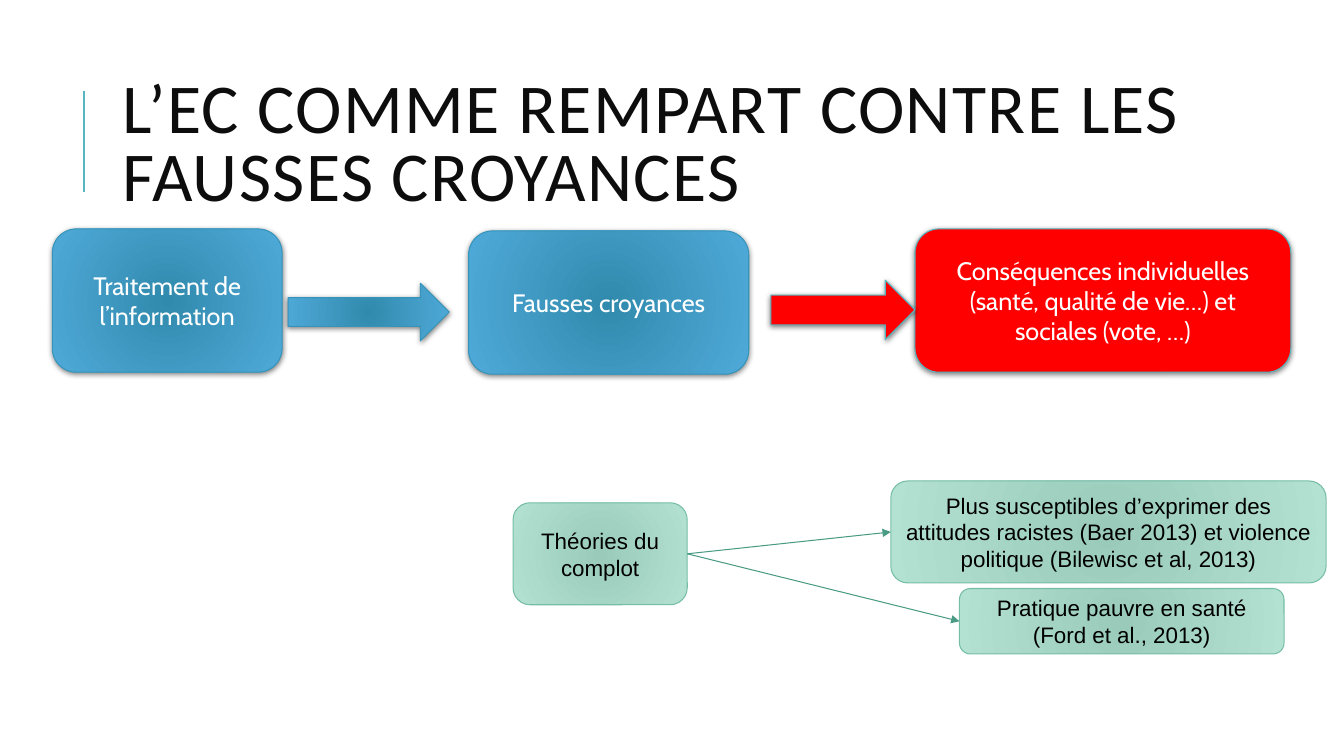
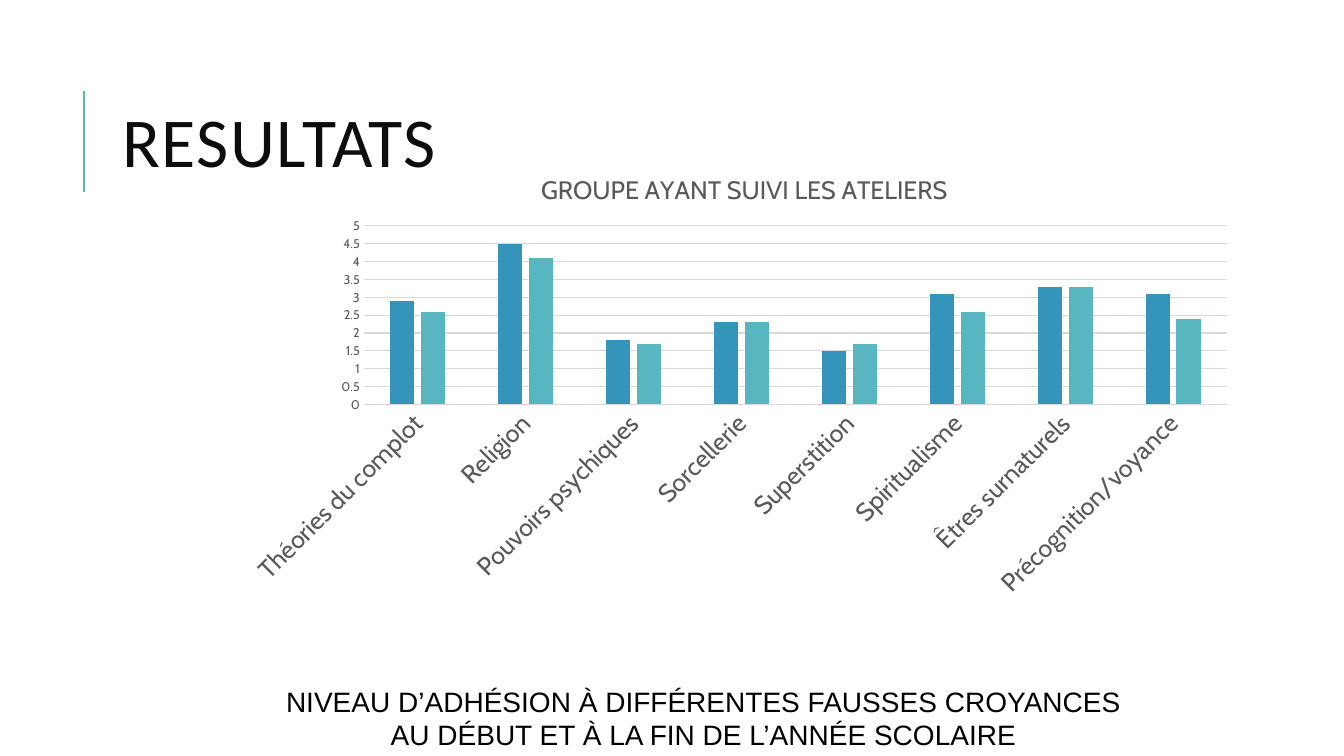
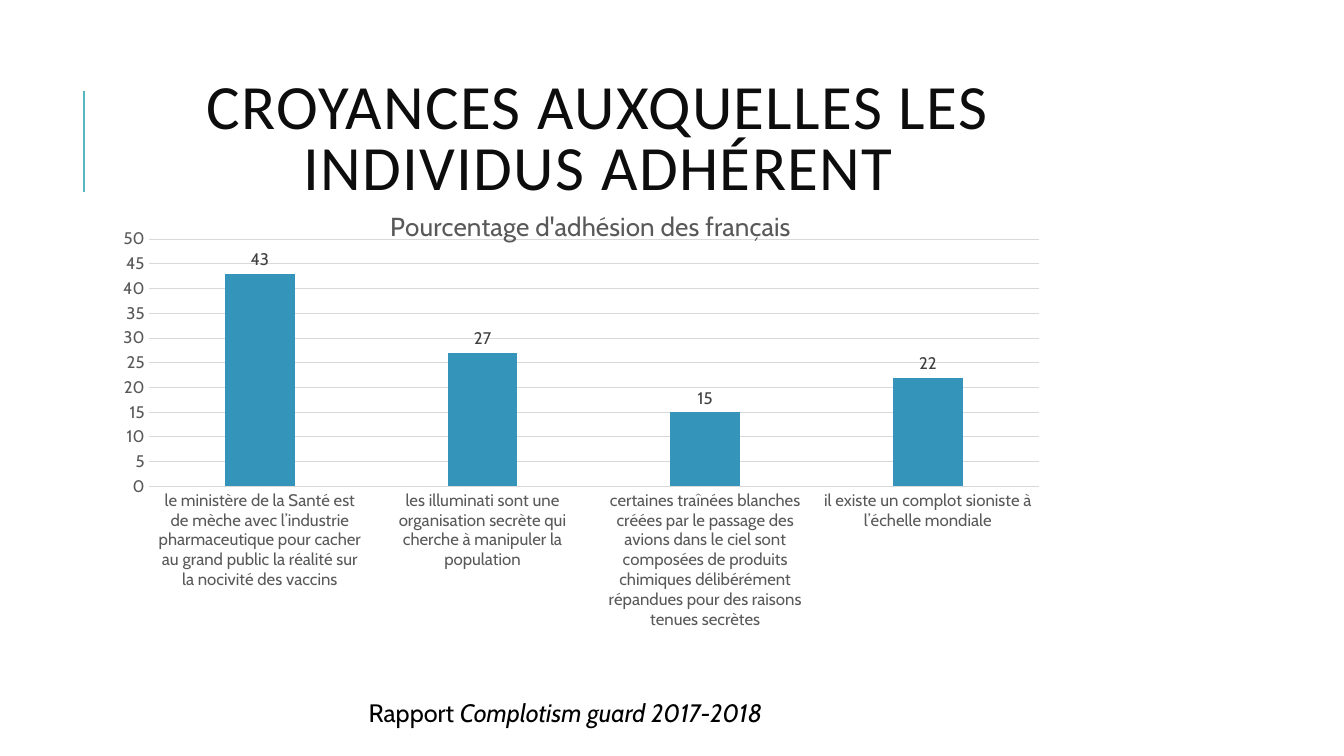
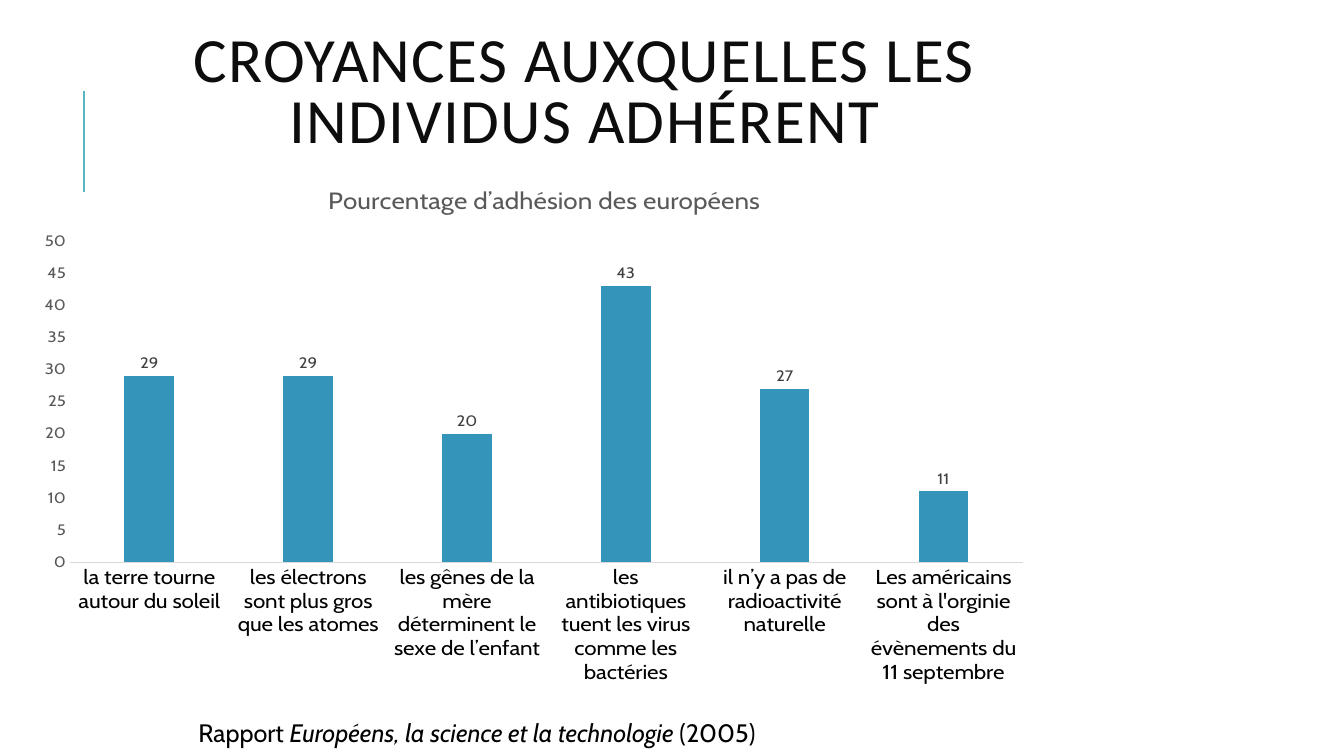
from pptx import Presentation, util as u
from pptx.chart import data
from pptx.dml import color
from pptx.enum import chart as ch, shapes, text
from pptx.oxml import ns, parse_xml

# Shared look
BLUE, TEAL, RED, MINT, PINE = "3494BA", "58B6C0", "FF0000", "75BDA7", "4A9B83"
BLACK, GREY, PALE = "000000", "595959", "D9D9D9"
HEAD = {"name": "Calibri", "color": "0D0D0D"}
NOTE = {"name": "Cabin", "size": 18, "color": BLACK}
MAIN = {"name": "Cabin", "size": 18, "color": "FFFFFF"}
SUB = {"name": "Arial", "size": 16, "color": BLACK}
DEEP = {"fill": ("308AAD", "50AAD9"), "line": BLUE, "shade": True}
ALERT = {"fill": RED, "line": TEAL, "shade": True}
SOFT = {"fill": ("99CABA", "B4E2D2"), "line": MINT, "shade": False}
CENTER = text.PP_ALIGN.CENTER


# Basic helpers
def rgb(code):
    return color.RGBColor.from_string(code)


def area(*vals):
    return [u.Cm(val) for val in vals]


def style(font, fmt):
    for key, val in fmt.items():
        if key == "color":
            font.color.rgb = rgb(val)
        else:
            setattr(font, key, u.Pt(val) if key == "size" else val)


def ink(line, code, width=0.75):
    line.color.rgb = rgb(code)
    line.width = u.Pt(width)


def node(body):
    """Build an XML element; the body starts with its tag name."""
    tag, _, rest = body.partition(" ")
    return parse_xml(f"<{tag} {ns.nsdecls('a', 'c')} {rest}")


def write(frame, paras, fmt, align=None):
    """Each paragraph is a list of (words, extra format) runs."""
    frame.word_wrap = True
    for num, runs in enumerate(paras):
        para = frame.paragraphs[0] if num == 0 else frame.add_paragraph()
        para.alignment = align
        for words, extra in runs:
            run = para.add_run()
            run.text = words
            style(run.font, {**fmt, **extra})


def plain(*lines):
    return [[(line, {})] for line in lines]


# Slide parts
def page(deck, title, box, size=50, align=None):
    slide = deck.slides.add_slide(deck.slide_layouts[6])
    link(slide, (2.11, 4.83, 2.11, 2.29), TEAL, 1.5)
    frame = slide.shapes.add_textbox(*area(*box)).text_frame
    frame.vertical_anchor = text.MSO_ANCHOR.MIDDLE
    write(frame, plain(title), {**HEAD, "size": size}, align)
    para = frame.paragraphs[0]
    para.line_spacing = 0.8
    para.runs[0]._r.get_or_add_rPr().set("spc", "100")
    return slide


def link(slide, ends, code, width=0.75):
    line = slide.shapes.add_connector(shapes.MSO_CONNECTOR.STRAIGHT, *area(*ends))
    ink(line.line, code, width)
    line.element.spPr.append(node("a:effectLst />"))
    return line


def join(slide, start, end):
    line = link(slide, (0, 0, 1, 1), PINE)
    line.begin_connect(start, 3)
    line.end_connect(end, 1)
    line.element.spPr.find(ns.qn("a:ln")).append(node('a:tailEnd type="triangle"/>'))


def block(slide, kind, box, look, paras=(), fmt=None):
    shape = slide.shapes.add_shape(kind, *area(*box))
    shape.shadow.inherit = False
    props = shape.element.spPr
    fill = look["fill"]
    shape.fill.solid()
    if isinstance(fill, str):
        shape.fill.fore_color.rgb = rgb(fill)
    else:
        stops = "".join(
            f'<a:gs pos="{pos}"><a:srgbClr val="{code}"/></a:gs>'
            for pos, code in zip((0, 100000), fill))
        sides = " ".join(f'{side}="100000"' for side in "ltrb")
        props.replace(props.find(ns.qn("a:solidFill")), node(
            f'a:gradFill rotWithShape="1"><a:gsLst>{stops}</a:gsLst>'
            f'<a:path path="circle"><a:fillToRect {sides}/></a:path></a:gradFill>'))
    ink(shape.line, look["line"])
    if look["shade"]:
        props.find(ns.qn("a:effectLst")).append(node(
            'a:outerShdw blurRad="50800" dist="12700" dir="5400000" rotWithShape="0">'
            '<a:srgbClr val="000000"><a:alpha val="50000"/></a:srgbClr></a:outerShdw>'))
    if paras:
        shape.text_frame.vertical_anchor = text.MSO_ANCHOR.MIDDLE
        write(shape.text_frame, paras, fmt, CENTER)
    return shape


def note(slide, box, paras, fmt=NOTE, align=None):
    frame = slide.shapes.add_textbox(*area(*box)).text_frame
    write(frame, paras, fmt, align)


# Charts
def place(parent, index, inner=False, **pos):
    """Fix the place of a chart part, in fractions of the chart."""
    old = parent.find(ns.qn("c:layout"))
    if old is not None:
        parent.remove(old)
    mode = '<c:layoutTarget val="inner"/>' if inner else ""
    mode += '<c:xMode val="edge"/><c:yMode val="edge"/>'
    vals = "".join(f'<c:{key} val="{val}"/>' for key, val in pos.items())
    parent.insert(index, node(
        f"c:layout ><c:manualLayout>{mode}{vals}</c:manualLayout></c:layout>"))


def graph(slide, box, title, spot, plot, cats, rows, top, step,
          cat, val=12, grid=True, marks=True, tilt=False, size=18.6):
    info = data.CategoryChartData()
    info.categories = cats
    for name, nums, _ in rows:
        info.add_series(name, nums)
    chart = slide.shapes.add_chart(
        ch.XL_CHART_TYPE.COLUMN_CLUSTERED, *area(*box), info).chart
    style(chart.font, {"name": "Cabin", "size": 10, "color": BLACK})
    chart.has_legend = False
    chart.has_title = True
    write(chart.chart_title.text_frame, plain(title),
          {"name": "Cabin", "size": size, "color": GREY, "bold": False})
    place(chart.chart_title.element, 1, x=spot[0], y=spot[1])
    zone = chart.element.find(".//" + ns.qn("c:plotArea"))
    place(zone, 0, True, **dict(zip("xywh", plot)))

    # Axes
    base, side = chart.category_axis, chart.value_axis
    for axis, fmt in ((base, cat), (side, {"size": val, "color": GREY})):
        axis.major_tick_mark = axis.minor_tick_mark = ch.XL_TICK_MARK.NONE
        style(axis.tick_labels.font, {"name": "Cabin", **fmt})
    ink(base.format.line, PALE)
    side.format.line.fill.background()
    side.minimum_scale, side.maximum_scale, side.major_unit = 0, top, step
    side.has_major_gridlines = grid
    if grid:
        ink(side.major_gridlines.format.line, PALE)
    if tilt:
        body = zone.find("/".join(map(ns.qn, ("c:catAx", "c:txPr", "a:bodyPr"))))
        body.set("rot", "-2700000")
        body.set("vert", "horz")

    # Columns
    bars = chart.plots[0]
    bars.gap_width, bars.overlap, bars.vary_by_categories = 219, -27, False
    for item, row in zip(bars.series, rows):
        item.format.fill.solid()
        item.format.fill.fore_color.rgb = rgb(row[2])
    if marks:
        bars.has_data_labels = True
        tags = bars.data_labels
        tags.show_value = True
        tags.position = ch.XL_LABEL_POSITION.OUTSIDE_END
        style(tags.font, {"name": "Cabin", "size": 12, "color": "404040"})


# Slides
def flow(deck):
    slide = page(deck, "L’EC COMME REMPART CONTRE LES FAUSSES CROYANCES",
                 (2.84, 1.63, 31.01, 4.17))
    card = shapes.MSO_SHAPE.ROUNDED_RECTANGLE
    arrow = shapes.MSO_SHAPE.RIGHT_ARROW
    for box, look, words in (
            ((1.32, 5.77, 5.79, 3.61), DEEP, "Traitement de l’information"),
            ((11.81, 5.82, 7.06, 3.61), DEEP, "Fausses croyances"),
            ((23.06, 5.77, 9.47, 3.61), ALERT,
             "Conséquences individuelles (santé, qualité de vie…) et sociales (vote, …)")):
        block(slide, card, box, look, plain(words), MAIN)
    block(slide, arrow, (7.26, 7.14, 4.06, 1.45), DEEP)
    block(slide, arrow, (19.43, 7.06, 3.63, 1.5), ALERT)

    plot, harm, health = [
        block(slide, card, box, SOFT, plain(*lines), SUB) for box, lines in (
            ((12.93, 12.67, 4.39, 2.57), ["Théories du complot"]),
            ((22.45, 12.12, 10.97, 2.57),
             ["Plus susceptibles d’exprimer des attitudes racistes (Baer 2013) "
              "et violence politique (Bilewisc et al, 2013)"]),
            ((24.18, 14.83, 8.18, 1.65),
             ["Pratique pauvre en santé", "(Ford et al., 2013)"]))]
    for end in (health, harm):
        join(slide, plot, end)


def result(deck):
    slide = page(deck, "RESULTATS", (2.84, 1.63, 27, 4.17))
    note(slide, (4.93, 17.12, 25.6, 1.96),
         plain("NIVEAU D’ADHÉSION À DIFFÉRENTES FAUSSES CROYANCES",
               "AU DÉBUT ET À LA FIN DE L’ANNÉE SCOLAIRE"),
         {**SUB, "size": 20}, CENTER)
    graph(slide, (5.84, 3.71, 25.6, 13.23), "GROUPE AYANT SUIVI LES ATELIERS",
          (0.3, 0.04), (0.13, 0.15, 0.85, 0.34),
          ["Théories du complot", "Religion", "Pouvoirs psychiques", "Sorcellerie",
           "Superstition", "Spiritualisme", "Êtres surnaturels",
           "Précognition/voyance"],
          [("Début d'année", (2.9, 4.5, 1.8, 2.3, 1.5, 3.1, 3.3, 3.1), BLUE),
           ("Fin d'année", (2.6, 4.1, 1.7, 2.3, 1.7, 2.6, 3.3, 2.4), TEAL)],
          5, 0.5, {"size": 18, "color": GREY}, val=9, marks=False, tilt=True,
          size=18)


def french(deck, title):
    slide = page(deck, title, (1.6, 1.75, 26.95, 3.66), 45, CENTER)
    note(slide, (9.04, 17.45, 11.13, 1.02),
         [[("Rapport ", {}), ("Complotism guard 2017-2018", {"italic": True})]])
    name = "Pourcentage d'adhésion des français"
    graph(slide, (2.79, 4.47, 23.88, 12.98), name,
          (0.29, 0.05), (0.04, 0.12, 0.94, 0.48),
          ["le ministère de la Santé est de mèche avec l’industrie pharmaceutique "
           "pour cacher au grand public la réalité sur la nocivité des vaccins",
           "les illuminati sont une organisation secrète qui cherche à manipuler "
           "la population",
           "certaines traînées blanches créées par le passage des avions dans le "
           "ciel sont composées de produits chimiques délibérément répandues pour "
           "des raisons tenues secrètes",
           "il existe un complot sioniste à l’échelle mondiale"],
          [(name, (43, 27, 15, 22), BLUE)], 50, 5, {"size": 12, "color": GREY})


def europe(deck, title):
    slide = page(deck, title, (1.8, 0.56, 25.88, 3.66), 45, CENTER)
    note(slide, (4.75, 17.96, 16.48, 1.02),
         [[("Rapport ", {}),
           ("Européens, la science et la technologie", {"italic": True}),
           (" (2005)", {})]])
    name = "Pourcentage d’adhésion des européens"
    graph(slide, (0.74, 4.06, 25.55, 13.18), name,
          (0.29, 0.04), (0.04, 0.17, 0.94, 0.68),
          ["la terre tourne autour du soleil",
           "les électrons sont plus gros que les atomes",
           "les gênes de la mère déterminent le sexe de l’enfant",
           "les antibiotiques tuent les virus comme les bactéries",
           "il n’y a pas de radioactivité naturelle",
           "Les américains sont à l'orginie des évènements du 11 septembre"],
          [(name, (29, 29, 20, 43, 27, 11), BLUE)], 50, 5,
          {"size": 16, "color": BLACK}, grid=False)


def main():
    deck = Presentation()
    deck.slide_width, deck.slide_height = area(33.87, 19.05)
    flow(deck)
    result(deck)
    belief = "CROYANCES AUXQUELLES LES INDIVIDUS ADHÉRENT"
    french(deck, belief)
    europe(deck, belief)
    deck.save("out.pptx")


if __name__ == "__main__":
    main()
